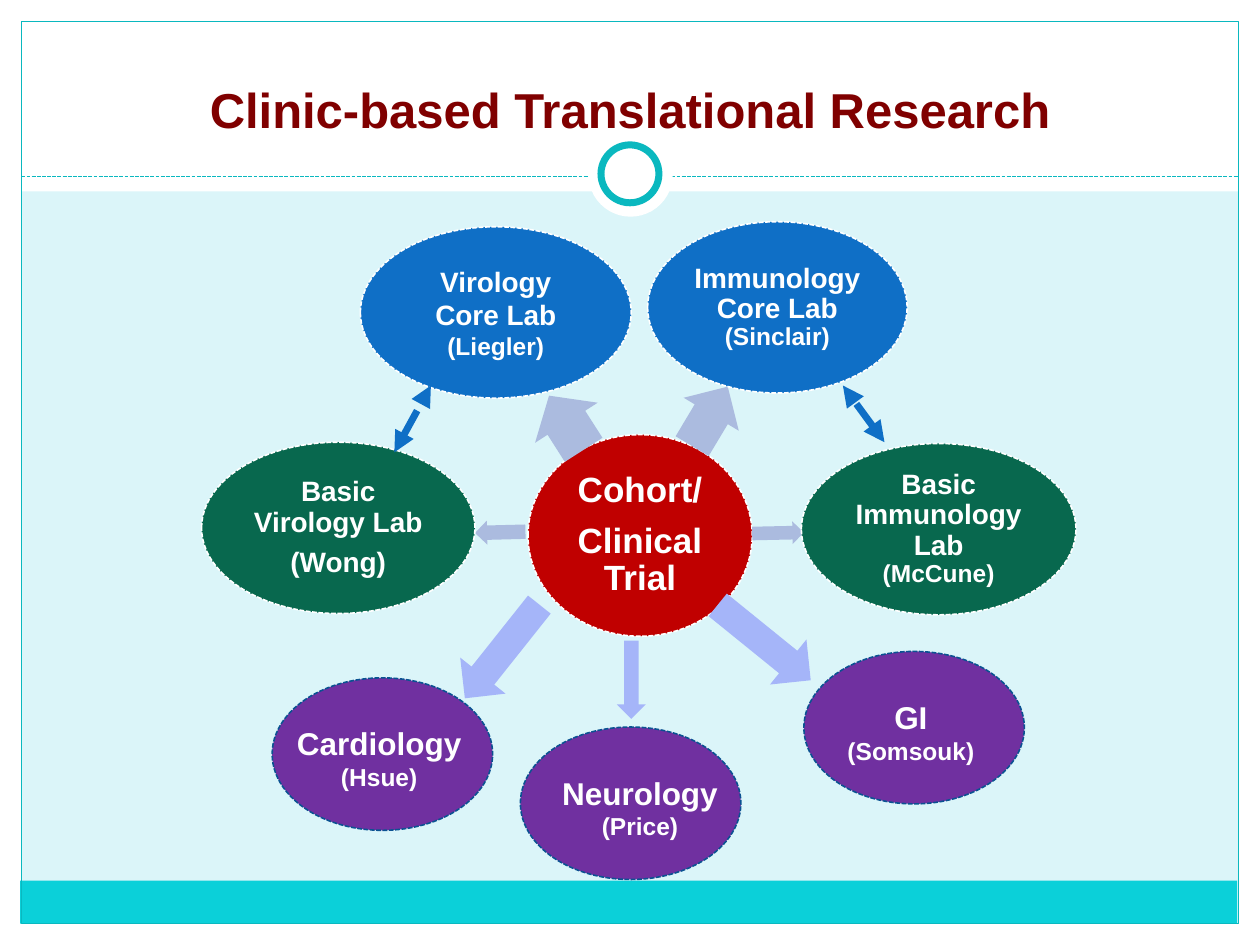
from lxml import etree
from pptx import Presentation
from pptx import util as u
from pptx.dml.color import RGBColor
from pptx.enum import dml, shapes, text
from pptx.oxml.ns import qn

SCALE = 9144
FONT = "Arial"
WHITE = RGBColor(0xFF, 0xFF, 0xFF)
PALE = RGBColor(0xDB, 0xF5, 0xF9)
CYAN = RGBColor(0x0B, 0xD0, 0xD9)
TEAL = RGBColor(0x0A, 0xB8, 0xBF)
MAROON = RGBColor(0x80, 0x00, 0x00)
RED = RGBColor(0xC0, 0x00, 0x00)
BLUE = RGBColor(0x0F, 0x6F, 0xC6)
NAVY = RGBColor(0x0B, 0x52, 0x92)
GREEN = RGBColor(0x08, 0x68, 0x4E)
PURPLE = RGBColor(0x70, 0x30, 0xA0)
STEEL = RGBColor(0xAB, 0xBB, 0xDF)
LILAC = RGBColor(0xA5, 0xB5, 0xF9)

RECT = shapes.MSO_SHAPE.RECTANGLE
OVAL = shapes.MSO_SHAPE.OVAL
ARROW = shapes.MSO_SHAPE.RIGHT_ARROW
DOTTED = dml.MSO_LINE.SQUARE_DOT
DASHED = dml.MSO_LINE.DASH


def px(*values):
    return [u.Emu(value * SCALE) for value in values]


def add_shape(page, kind, box, fill=None, line=None, weight=0.75, dash=None):
    shape = page.shapes.add_shape(kind, *px(*box))
    shape.shadow.inherit = False
    if fill is None:
        shape.fill.background()
    else:
        shape.fill.solid()
        shape.fill.fore_color.rgb = fill
    if line is None:
        shape.line.fill.background()
    else:
        shape.line.color.rgb = line
        shape.line.width = u.Pt(weight)
        shape.line.dash_style = dash
    return shape


def add_line(page, start, end, color, weight, dash, arrows=False):
    line = page.shapes.add_connector(shapes.MSO_CONNECTOR.STRAIGHT, *px(*start, *end))
    line.line.color.rgb = color
    line.line.width = u.Pt(weight)
    line.line.dash_style = dash
    if arrows:
        outline = line.line._get_or_add_ln()
        for end_tag in ("a:headEnd", "a:tailEnd"):
            etree.SubElement(outline, qn(end_tag), type="triangle")
    etree.SubElement(line._element.spPr, qn("a:effectLst"))


def write(para, words, size, color=WHITE, spacing=None, after=0):
    para.alignment = text.PP_ALIGN.CENTER
    para.line_spacing = spacing
    para.space_before = u.Pt(0)
    para.space_after = u.Pt(after)
    span = para.add_run()
    span.text = words
    span.font.name = FONT
    span.font.size = u.Pt(size)
    span.font.bold = True
    span.font.color.rgb = color


def add_label(page, box, lines, anchor, inset=None, spacing=None, after=0):
    frame = page.shapes.add_textbox(*px(*box)).text_frame
    frame.word_wrap = True
    frame.vertical_anchor = anchor
    if inset is not None:
        margin, = px(inset)
        frame.margin_left = frame.margin_right = margin
        frame.margin_top = frame.margin_bottom = margin
    for index, (words, size) in enumerate(lines):
        para = frame.add_paragraph() if index else frame.paragraphs[0]
        write(para, words, size, spacing=spacing, after=after)


def add_lab(page, box, fill, lines, inset=(32, 20), margin=2, spacing=0.9, after=0):
    left, top, width, height = box
    across, down = inset
    add_shape(page, OVAL, box, fill, WHITE, 0.9, DOTTED)
    label = (left + across, top + down, width - 2 * across, height - 2 * down)
    add_label(page, label, lines, text.MSO_ANCHOR.MIDDLE, margin, spacing, after)


def add_specialty(page, box, name, lead, shift=7):
    left, top, width, height = box
    add_shape(page, OVAL, box, PURPLE, NAVY, 0.9, DOTTED)
    add_label(page, (left + shift, top + 32, 156, 64), [(name, 18), (lead, 14)],
              text.MSO_ANCHOR.TOP)


def add_arrow(page, box, angle, fill, thickness=0.5):
    arrow = add_shape(page, ARROW, box, fill)
    arrow.rotation = angle
    arrow.adjustments[0] = thickness


def add_frame(page, box):
    left, top, width, height = box
    page.background.fill.solid()
    page.background.fill.fore_color.rgb = PALE
    for band in ((left, 733, width, 17), (left, top, width, 152),
                 (left, top, 17, height), (width - 17, top, 17, height)):
        add_shape(page, RECT, band, WHITE)
    add_shape(page, RECT, (16, 699, 966, 34), CYAN)
    add_shape(page, RECT, (17, 17, 966, 716), line=TEAL)
    add_line(page, (17, 140), (983, 140), TEAL, 0.75, DOTTED)
    add_shape(page, OVAL, (467, 105, 67, 67), WHITE)
    add_shape(page, OVAL, (477, 115, 46, 46), WHITE, TEAL, 4)


def add_title(page, box, words):
    title = page.shapes.title
    title.left, title.top, title.width, title.height = px(*box)
    frame = title.text_frame
    frame.word_wrap = True
    frame.auto_size = text.MSO_AUTO_SIZE.NONE
    frame.vertical_anchor = text.MSO_ANCHOR.BOTTOM
    write(frame.paragraphs[0], words, 28, MAROON)
    page.shapes._spTree.append(title._element)


def add_core(page):
    add_lab(page, (419, 345, 178, 160), RED, [("Cohort/", 20), ("Clinical Trial", 20)],
            inset=(26, 24), margin=3, after=7)
    add_arrow(page, (536, 305, 55, 51), 300.9, STEEL, 0.6)
    add_lab(page, (514, 176, 206, 136), BLUE,
            [("Immunology Core Lab", 16), ("(Sinclair)", 14)], inset=(30, 20))
    add_arrow(page, (597, 414, 41, 18), 358.8, STEEL, 0.6)
    add_lab(page, (636, 352, 218, 136), GREEN,
            [("Basic Immunology Lab", 16), ("(McCune)", 14)])
    add_arrow(page, (424, 306, 51, 59), 237.4, STEEL, 0.6)
    add_lab(page, (286, 180, 215, 136), BLUE,
            [("Virology", 16), ("Core Lab", 16), ("(Liegler)", 14)], spacing=None)
    add_arrow(page, (377, 413, 40, 19), 178.5, STEEL, 0.6)
    add_lab(page, (160, 351, 217, 136), GREEN,
            [("Basic Virology Lab", 16), ("(Wong)", 16)], after=5.6)


def add_specialties(page):
    add_arrow(page, (351, 494, 95, 46), 128.5, LILAC)
    add_specialty(page, (216, 538, 175, 121), "Cardiology", "(Hsue)")
    add_arrow(page, (559, 487, 95, 46), 39, LILAC)
    add_specialty(page, (638, 517, 175, 121), "GI", "(Somsouk)")
    add_line(page, (313, 359), (342, 306), BLUE, 4, DASHED, arrows=True)
    add_line(page, (702, 351), (669, 306), BLUE, 4, DASHED, arrows=True)
    add_arrow(page, (470, 528, 62, 23), 90, LILAC)
    add_specialty(page, (413, 577, 175, 121), "Neurology", "(Price)", shift=17)


def main():
    deck = Presentation()
    deck.slide_width, deck.slide_height = px(1000, 750)
    page = deck.slides.add_slide(deck.slide_layouts.get_by_name("Title Only"))
    add_frame(page, (0, 0, 1000, 750))
    add_title(page, (75, 27, 850, 88), "Clinic-based Translational Research")
    add_core(page)
    add_specialties(page)
    deck.save("out.pptx")


if __name__ == "__main__":
    main()
